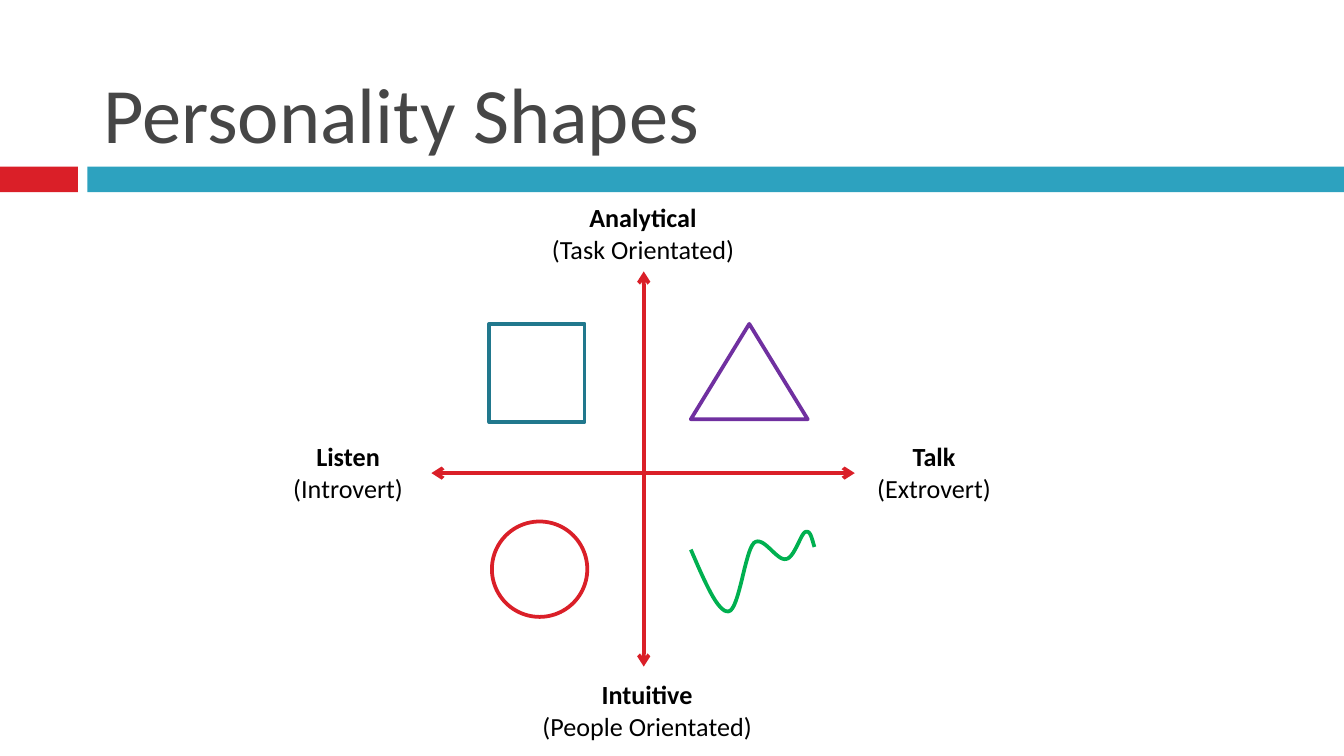
"""Build the Personality Shapes slide: four shapes on a listen/talk and analytical/intuitive cross."""
from lxml import etree
from pptx import Presentation
from pptx.dml.color import RGBColor
from pptx.enum.shapes import MSO_CONNECTOR, MSO_SHAPE
from pptx.enum.text import MSO_ANCHOR, MSO_AUTO_SIZE, PP_ALIGN
from pptx.oxml.ns import qn
from pptx.util import Inches, Pt

RECT, OVAL, TRIANGLE = MSO_SHAPE.RECTANGLE, MSO_SHAPE.OVAL, MSO_SHAPE.ISOSCELES_TRIANGLE
STRAIGHT = MSO_CONNECTOR.STRAIGHT
CENTER, LEFT = PP_ALIGN.CENTER, PP_ALIGN.LEFT
TOP, BOTTOM = MSO_ANCHOR.TOP, MSO_ANCHOR.BOTTOM
FIXED, GROW = MSO_AUTO_SIZE.NONE, MSO_AUTO_SIZE.SHAPE_TO_FIT_TEXT

WIDTH = Inches(10)
HEIGHT = WIDTH * 9 // 16
FONT = "Calibri"
LINE_WIDTH = Pt(2)
CURVE_STEPS = 16
COLORS = {
    "red": "DA1F28", "teal": "2DA2BF", "dark teal": "21788D", "green": "00B050",
    "purple": "7030A0", "gray": "464646", "black": "000000",
}

TITLE = ("Personality Shapes", (6.7, 2.31, 89.2, 19.56))
BANDS = [("red", (0, 22.04, 5.8, 3.38)), ("teal", (6.5, 22.04, 93.5, 3.38))]
OUTLINES = [
    (OVAL, "red", (36.6, 68.98, 7.1, 12.62)),
    (RECT, "dark teal", (36.4, 42.84, 7.1, 12.98)),
    (TRIANGLE, "purple", (51.4, 42.84, 8.7, 12.62)),
]
SQUIGGLE_START = (51.4, 72.71)
SQUIGGLE = [
    ((52.4, 76.8), (53.4, 81.07), (54.2, 80.89)),
    ((55.0, 80.71), (55.4, 73.07), (56.1, 71.82)),
    ((56.8, 70.76), (57.8, 74.31), (58.5, 73.96)),
    ((59.1, 73.78), (59.6, 70.58), (59.9, 70.4)),
    ((60.3, 70.04), (60.4, 71.29), (60.6, 72.36)),
]
ORIGIN = (47.9, 62.58)
ARROW_TIPS = [(47.9, 35.91), (47.9, 88.18), (63.6, 62.58), (32.1, 62.58)]
LABELS = [
    ("Analytical", "(Task Orientated)", (39.2, 25.78, 17.3, 10.13)),
    ("Intuitive", "(People Orientated)", (37.9, 88.89, 20.5, 10.13)),
    ("Listen", "(Introvert)", (20, 57.42, 11.8, 10.13)),
    ("Talk", "(Extrovert)", (63.6, 57.42, 11.8, 10.13)),
]


def rgb(name):
    return RGBColor.from_string(COLORS[name])


def place(*shares):
    return [round(v * (HEIGHT if i % 2 else WIDTH) / 100) for i, v in enumerate(shares)]


def outline(sp, color):
    sp.shadow.inherit = False
    sp.fill.background()
    sp.line.color.rgb = rgb(color)
    sp.line.width = LINE_WIDTH


def add_band(s, color, box):
    sp = s.shapes.add_shape(RECT, *place(*box))
    sp.shadow.inherit = False
    sp.fill.solid()
    sp.fill.fore_color.rgb = rgb(color)
    sp.line.fill.background()


def add_text(s, lines, box, size, color, align, anchor, fit):
    tf = s.shapes.add_textbox(*place(*box)).text_frame
    tf.word_wrap = True
    tf.auto_size = fit
    tf.vertical_anchor = anchor
    tf.text = "\n".join(text for text, bold in lines)
    for p, (text, bold) in zip(tf.paragraphs, lines):
        p.alignment = align
        font = p.runs[0].font
        font.name, font.size, font.bold = FONT, Pt(size), bold
        font.color.rgb = rgb(color)


def add_arrow(s, tip):
    cn = s.shapes.add_connector(STRAIGHT, *place(*ORIGIN, *tip))
    cn.line.color.rgb = rgb("red")
    cn.line.width = LINE_WIDTH
    props = cn._element.spPr
    etree.SubElement(props.find(qn("a:ln")), qn("a:tailEnd"), type="arrow")
    etree.SubElement(props, qn("a:effectLst"))


def bezier(points, t):
    weights = ((1 - t) ** 3, 3 * t * (1 - t) ** 2, 3 * t * t * (1 - t), t ** 3)
    return [sum(w * p[axis] for w, p in zip(weights, points)) for axis in (0, 1)]


def add_squiggle(s):
    builder = s.shapes.build_freeform(*place(*SQUIGGLE_START))
    start, points = SQUIGGLE_START, []
    for segment in SQUIGGLE:
        for i in range(1, CURVE_STEPS + 1):
            points.append(place(*bezier((start, *segment), i / CURVE_STEPS)))
        start = segment[-1]
    builder.add_line_segments(points, close=False)
    outline(builder.convert_to_shape(), "green")


def main():
    prs = Presentation()
    prs.slide_width, prs.slide_height = WIDTH, HEIGHT
    s = prs.slides.add_slide(prs.slide_layouts[6])
    for color, box in BANDS:
        add_band(s, color, box)
    title, box = TITLE
    add_text(s, [(title, False)], box, 42, "gray", LEFT, BOTTOM, FIXED)
    for kind, color, box in OUTLINES:
        outline(s.shapes.add_shape(kind, *place(*box)), color)
    add_squiggle(s)
    for tip in ARROW_TIPS:
        add_arrow(s, tip)
    for name, detail, box in LABELS:
        add_text(s, [(name, True), (detail, False)], box, 14, "black", CENTER, TOP, GROW)
    prs.save("out.pptx")


if __name__ == "__main__":
    main()
